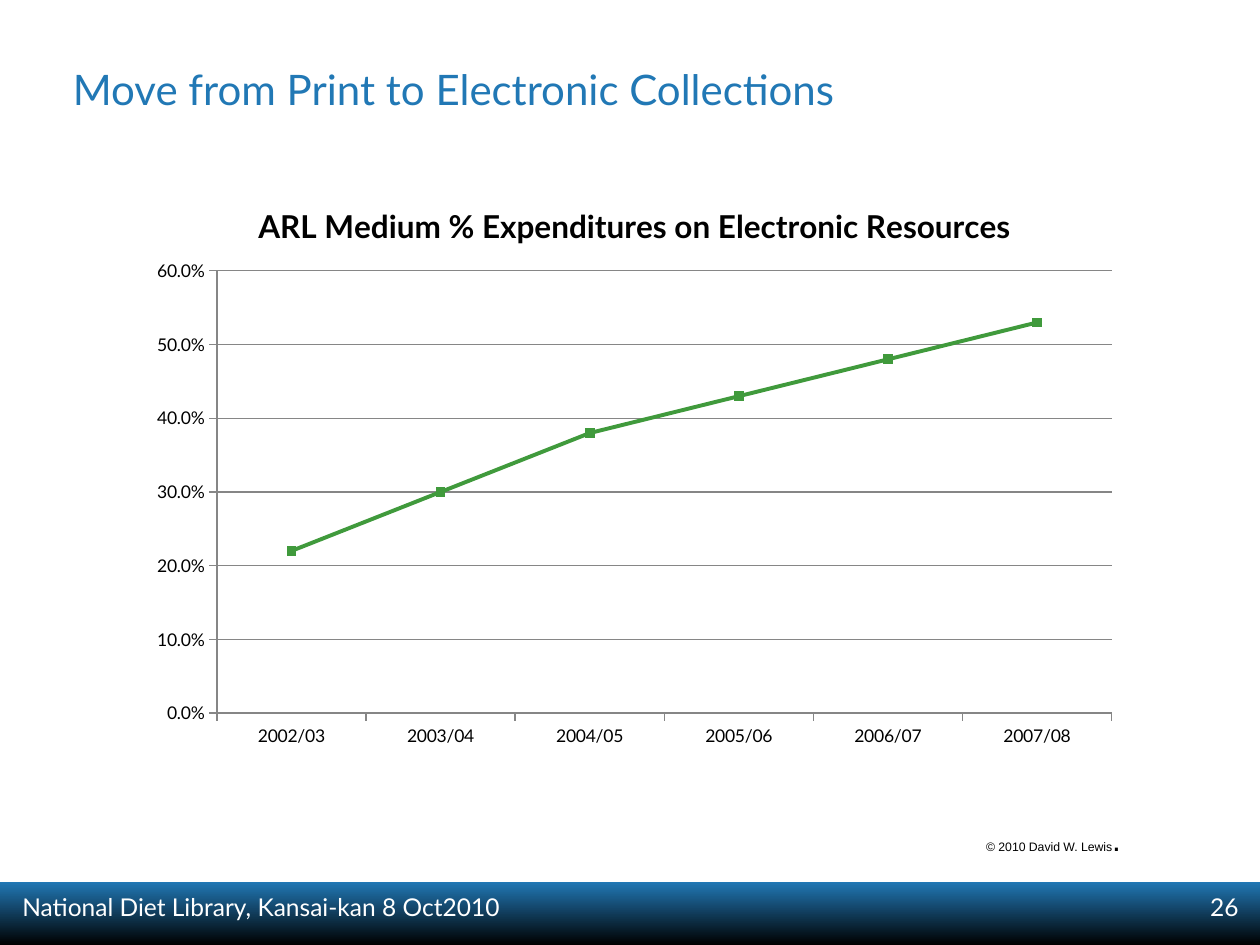
import pptx
import pptx.chart.data
import pptx.dml.color
import pptx.enum.chart
import pptx.enum.shapes
import pptx.enum.text
import pptx.oxml
import pptx.util
from pptx.util import Cm

BLUE = pptx.dml.color.RGBColor(0x21, 0x78, 0xB5)
GREEN = pptx.dml.color.RGBColor(0x40, 0x9A, 0x3C)
GRAY = pptx.dml.color.RGBColor(0x86, 0x86, 0x86)
BLACK = pptx.dml.color.RGBColor(0, 0, 0)
WHITE = pptx.dml.color.RGBColor(0xFF, 0xFF, 0xFF)
LEFT = pptx.enum.text.PP_ALIGN.LEFT
RIGHT = pptx.enum.text.PP_ALIGN.RIGHT
TOP = pptx.enum.text.MSO_ANCHOR.TOP
MIDDLE = pptx.enum.text.MSO_ANCHOR.MIDDLE

TEXTS = [
    ("National Diet Library, Kansai-kan 8 Oct2010", (0.2, 17.86, 14.4, 0.84), 14, WHITE, LEFT, TOP),
    ("26", (23.52, 17.86, 1.7, 0.84), 14, WHITE, RIGHT, TOP),
    ("Move from Print to Electronic Collections", (1.22, 0.41, 22.28, 2.77), 24, BLUE, LEFT, MIDDLE),
]
CREDIT = [("© 2010 David W. Lewis", 7), (".", 18)]
CHART_TITLE = "ARL Medium % Expenditures on Electronic Resources"
EXPENDITURES = {
    "2002/03": 0.22,
    "2003/04": 0.3,
    "2004/05": 0.38,
    "2005/06": 0.43,
    "2006/07": 0.48,
    "2007/08": 0.53,
}
PLOT_LAYOUT = {"x": 0.08, "y": 0.16, "w": 0.9, "h": 0.77}


def set_font(font, name, size, color):
    font.name = name
    font.size = pptx.util.Pt(size)
    font.color.rgb = color


def add_band(slide):
    band = slide.shapes.add_shape(
        pptx.enum.shapes.MSO_SHAPE.RECTANGLE, 0, Cm(17.78), Cm(25.4), Cm(1.27))
    band.shadow.inherit = False
    band.line.fill.background()
    band.fill.gradient()
    band.fill.gradient_angle = 270
    for stop, color, position in zip(band.fill.gradient_stops, (BLUE, BLACK), (0, 1)):
        stop.color.rgb = color
        stop.position = position


def add_text(slide, text, box, size, color, alignment, anchor):
    frame = slide.shapes.add_textbox(*map(Cm, box)).text_frame
    frame.word_wrap = True
    frame.vertical_anchor = anchor
    paragraph = frame.paragraphs[0]
    paragraph.text = text
    paragraph.alignment = alignment
    set_font(paragraph.font, "Lato", size, color)


def add_credit(slide):
    frame = slide.shapes.add_textbox(Cm(19.63), Cm(16.41), Cm(3.25), Cm(1.02)).text_frame
    frame.word_wrap = False
    for text, size in CREDIT:
        run = frame.paragraphs[0].add_run()
        run.text = text
        set_font(run.font, "Arial", size, BLACK)


def place_plot(chart):
    plot_area = chart.plots[0]._element.getparent()
    for old_layout in plot_area.findall(pptx.oxml.ns.qn("c:layout")):
        plot_area.remove(old_layout)
    modes = '<c:layoutTarget val="inner"/><c:xMode val="edge"/><c:yMode val="edge"/>'
    sizes = "".join(f'<c:{key} val="{value}"/>' for key, value in PLOT_LAYOUT.items())
    plot_area.insert(0, pptx.oxml.parse_xml(
        f'<c:layout {pptx.oxml.ns.nsdecls("c")}><c:manualLayout>'
        f"{modes}{sizes}</c:manualLayout></c:layout>"))


def add_expenditure_chart(slide):
    data = pptx.chart.data.CategoryChartData(number_format="0.0%")
    data.categories = list(EXPENDITURES)
    data.add_series("Series 1", list(EXPENDITURES.values()))
    chart = slide.shapes.add_chart(
        pptx.enum.chart.XL_CHART_TYPE.LINE_MARKERS,
        Cm(2.77), Cm(3.61), Cm(20.04), Cm(11.58), data).chart
    set_font(chart.font, "Lato", 10, BLACK)
    chart.has_legend = False
    chart.has_title = True
    title = chart.chart_title.text_frame.paragraphs[0]
    title.text = CHART_TITLE
    set_font(title.font, "Lato", 18, BLACK)
    title.font.bold = True
    place_plot(chart)

    value_axis = chart.value_axis
    value_axis.minimum_scale = 0
    value_axis.maximum_scale = 0.6
    value_axis.major_unit = 0.1
    value_axis.has_major_gridlines = True
    value_axis.tick_labels.number_format = "0.0%"
    value_axis.tick_labels.number_format_is_linked = False
    for axis in (value_axis, chart.category_axis):
        axis.major_tick_mark = pptx.enum.chart.XL_TICK_MARK.OUTSIDE
    for owner in (value_axis, chart.category_axis, value_axis.major_gridlines):
        owner.format.line.color.rgb = GRAY
        owner.format.line.width = pptx.util.Pt(0.75)

    chart.plots[0].vary_by_categories = False
    series = chart.plots[0].series[0]
    series.smooth = False
    series.format.line.color.rgb = GREEN
    series.format.line.width = pptx.util.Pt(2.25)
    series.marker.style = pptx.enum.chart.XL_MARKER_STYLE.SQUARE
    series.marker.size = 5
    series.marker.format.fill.solid()
    series.marker.format.fill.fore_color.rgb = GREEN
    series.marker.format.line.color.rgb = GREEN


def main():
    presentation = pptx.Presentation()
    presentation.slide_width = Cm(25.4)
    presentation.slide_height = Cm(19.05)
    slide = presentation.slides.add_slide(presentation.slide_layouts[6])
    add_band(slide)
    for text in TEXTS:
        add_text(slide, *text)
    add_expenditure_chart(slide)
    add_credit(slide)
    presentation.save("out.pptx")


if __name__ == "__main__":
    main()
